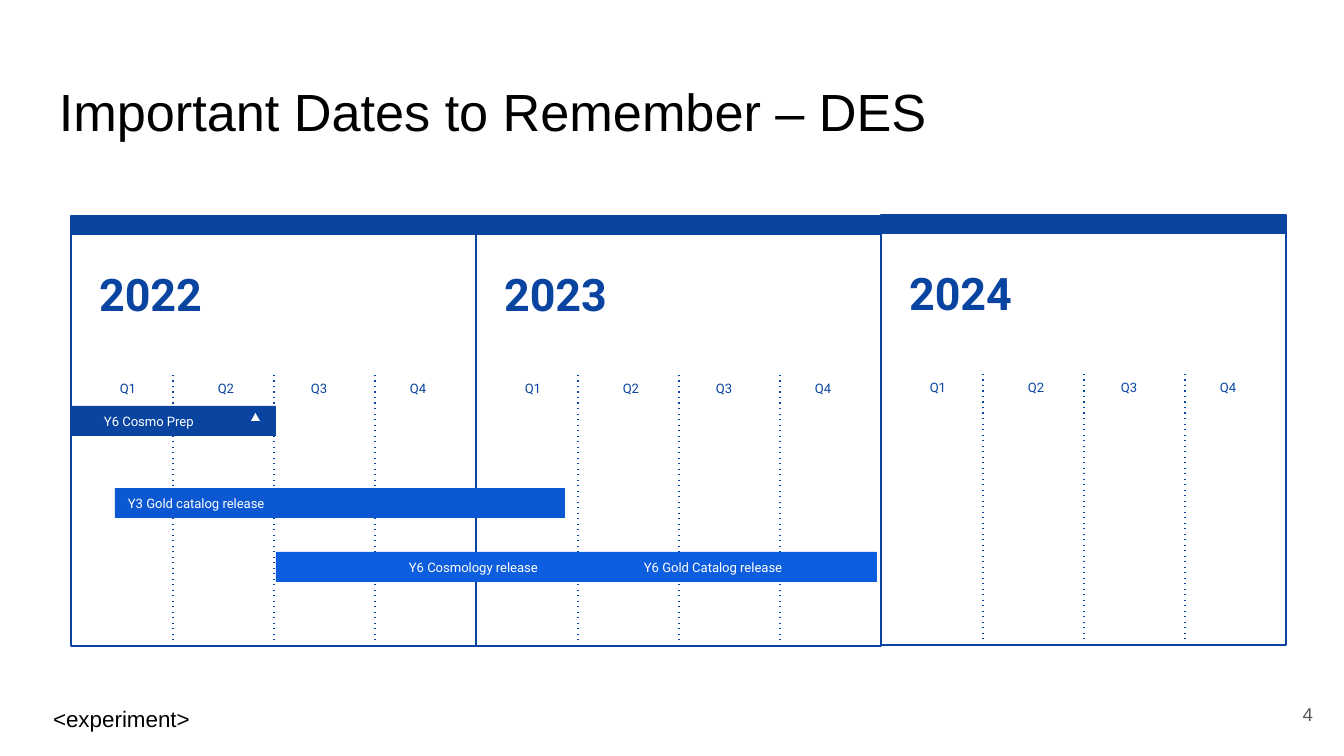
from lxml.etree import SubElement
from pptx import Presentation
from pptx.dml.color import RGBColor
from pptx.enum.dml import MSO_LINE
from pptx.enum.shapes import MSO_CONNECTOR, MSO_SHAPE
from pptx.enum.text import MSO_ANCHOR, PP_ALIGN
from pptx.oxml.ns import qn
from pptx.util import Pt

PX = 914400 / 134.4
NAVY = RGBColor(0x09, 0x44, 0xA1)
BLUE = RGBColor(0x0C, 0x58, 0xD3)
BRIGHT = RGBColor(0x0D, 0x5D, 0xDF)
WHITE = RGBColor(0xFF, 0xFF, 0xFF)
BLACK = RGBColor(0, 0, 0)
GREY = RGBColor(0x59, 0x59, 0x59)

INSET = 13
LEFT, YEAR_W, YEAR_H, HEADER_H = 71, 405, 430, 19
QUARTER_W, QUARTER_TOP = 101, 159
QUARTERS = [("Q1", 24), ("Q2", 122), ("Q3", 215), ("Q4", 314)]

# year, top
YEARS = [("2022", 216), ("2023", 216), ("2024", 215)]

# text, box, fill, left inset, tab stop
BARS = [
    ("Y6 Cosmo Prep", (71, 406, 205, 30), NAVY, 33, None),
    ("Y6 Cosmology release\tY6 Gold Catalog release", (276, 552, 601, 30), BRIGHT, 133, 235),
    ("Y3 Gold catalog release", (115, 488, 450, 30), BLUE, INSET, None),
]
MARKER = (251, 413, 9, 8)

TITLE_FONT = dict(name="Arial", size=Pt(28), color=BLACK)
FOOTER_FONT = dict(name="Arial", size=Pt(12), color=BLACK)
NUMBER_FONT = dict(name="Arial", size=Pt(10), color=GREY)
YEAR_FONT = dict(name="Roboto", size=Pt(24), bold=True, color=NAVY)
QUARTER_FONT = dict(name="Roboto", size=Pt(7), color=NAVY)
BAR_FONT = dict(name="Roboto", size=Pt(7), color=WHITE)

CAPTIONS = [
    ("<experiment>", (40, 692, 195, 39), FOOTER_FONT, PP_ALIGN.LEFT, MSO_ANCHOR.TOP),
    ("Important Dates to Remember – DES", (46, 66, 1253, 83), TITLE_FONT,
     PP_ALIGN.LEFT, MSO_ANCHOR.TOP),
    ("4", (1245, 685, 81, 58), NUMBER_FONT, PP_ALIGN.RIGHT, MSO_ANCHOR.MIDDLE),
]


def emu(*lengths):
    return [round(n * PX) for n in lengths]


def write(sp, text, font, align=PP_ALIGN.CENTER, anchor=MSO_ANCHOR.MIDDLE, left=INSET):
    tf = sp.text_frame
    tf.word_wrap = True
    tf.vertical_anchor = anchor
    tf.margin_left, *others = emu(left, INSET, INSET, INSET)
    tf.margin_top, tf.margin_right, tf.margin_bottom = others
    p = tf.paragraphs[0]
    p.alignment = align
    r = p.add_run()
    r.text = text
    for key, value in font.items():
        if key == "color":
            r.font.color.rgb = value
        else:
            setattr(r.font, key, value)
    return p


def add_text(shapes, box, *args, **kwargs):
    write(shapes.add_textbox(*emu(*box)), *args, **kwargs)


def add_box(shapes, box, fill=None, line=None, kind=MSO_SHAPE.RECTANGLE):
    sp = shapes.add_shape(kind, *emu(*box))
    sp.shadow.inherit = False
    for fmt, color in ((sp.fill, fill), (sp.line.fill, line)):
        if color is None:
            fmt.background()
        else:
            fmt.solid()
            fmt.fore_color.rgb = color
    if line is not None:
        sp.line.width = Pt(0.75)
    return sp


def add_dotted_line(shapes, x, top, bottom):
    line = shapes.add_connector(MSO_CONNECTOR.STRAIGHT, *emu(x, top, x, bottom))
    line.line.color.rgb = NAVY
    line.line.width = Pt(0.75)
    line.line.dash_style = MSO_LINE.ROUND_DOT
    line._element.xpath(".//a:prstDash")[0].set("val", "dot")
    SubElement(line._element.spPr, qn("a:effectLst"))


def add_year(slide, column, year, top):
    x = LEFT + column * YEAR_W
    shapes = slide.shapes.add_group_shape().shapes
    add_box(shapes, (x, top, YEAR_W, YEAR_H), line=NAVY)
    add_box(shapes, (x, top, YEAR_W, HEADER_H), fill=NAVY)
    add_text(shapes, (x, top + HEADER_H, 159, 117), year, YEAR_FONT)
    for label, offset in QUARTERS:
        add_text(shapes, (x + offset, top + QUARTER_TOP, 66, 26), label, QUARTER_FONT)
    for q in range(1, len(QUARTERS)):
        add_dotted_line(shapes, x + 1 + q * QUARTER_W, top + QUARTER_TOP, top + YEAR_H)


def add_bar(slide, text, box, fill, left, tab):
    sp = add_box(slide.shapes, box, fill)
    p = write(sp, text, BAR_FONT, PP_ALIGN.LEFT, left=left)
    if tab:
        tabs = SubElement(p._p.get_or_add_pPr(), qn("a:tabLst"))
        SubElement(tabs, qn("a:tab"), pos=str(emu(tab)[0]), algn="l")


def main():
    prs = Presentation()
    prs.slide_width, prs.slide_height = emu(1344, 756)
    s = prs.slides.add_slide(prs.slide_layouts[6])
    for text, box, font, align, anchor in CAPTIONS:
        add_text(s.shapes, box, text, font, align, anchor)
    # Every grid goes under the bars, so that no line crosses a label.
    for column, (year, top) in enumerate(YEARS):
        add_year(s, column, year, top)
    for bar in BARS:
        add_bar(s, *bar)
    add_box(s.shapes, MARKER, WHITE, kind=MSO_SHAPE.ISOSCELES_TRIANGLE)
    prs.save("out.pptx")


if __name__ == "__main__":
    main()
